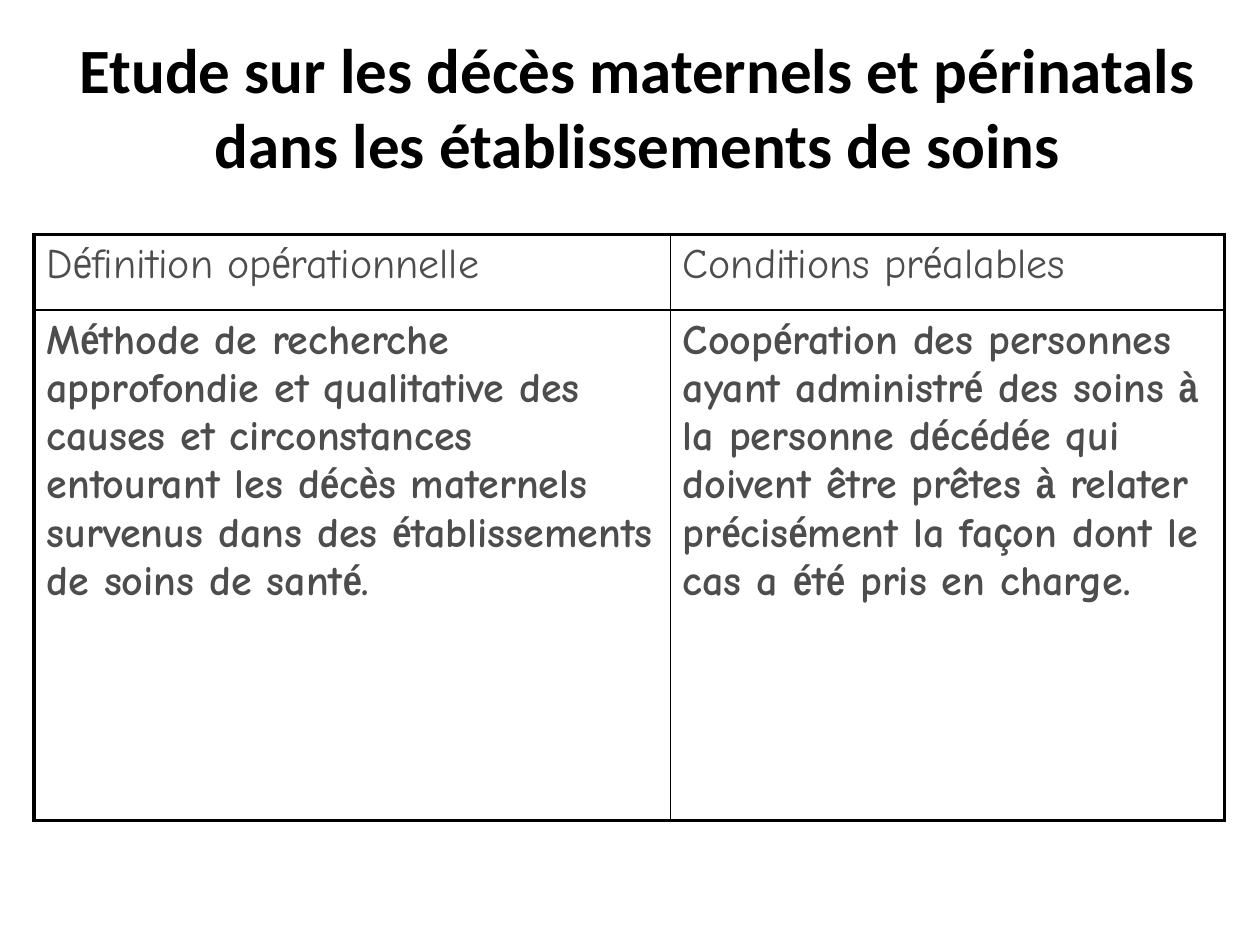
from itertools import groupby

from lxml.etree import SubElement
from pptx import Presentation
from pptx.dml.color import RGBColor
from pptx.enum.text import MSO_ANCHOR as Anchor, PP_ALIGN as Align
from pptx.oxml.ns import qn
from pptx.util import Inches, Pt

TITLE = "Etude sur les décès maternels et périnatals dans les établissements de soins"
ROWS = [
    ("Définition opérationnelle", "Conditions préalables"),
    (
        "Méthode de recherche approfondie et qualitative des causes et circonstances "
        "entourant les décès maternels survenus dans des établissements de soins de santé.",
        "Coopération des personnes ayant administré des soins à la personne décédée qui "
        "doivent être prêtes à relater précisément la façon dont le cas a été pris en charge.",
    ),
]
COLUMN_WIDTHS = [5.05, 4.4]
ROW_HEIGHTS = [0.6, 4.05]
COLORS = {"title": "000000", "text": "4D4D4D", "border": "000000"}
TITLE_FONT, BODY_FONT, ACCENT_FONT = "Calibri", "Comic Neue", "Arial Narrow"
ACCENTS = "éèàç"
OUTER, INNER = 2.25, 1


def write(para, text, font, size, color, bold=False, accent_font=None):
    for accented, letters in groupby(text, lambda letter: letter in ACCENTS):
        span = para.add_run()
        span.text = "".join(letters)
        span.font.name = accent_font if accented and accent_font else font
        span.font.size = Pt(size)
        span.font.bold = bold
        span.font.color.rgb = RGBColor.from_string(color)


def set_borders(cell, widths):
    properties = cell._tc.get_or_add_tcPr()
    for side in "LRTB":
        line = SubElement(properties, qn(f"a:ln{side}"), w=str(Pt(widths[side])))
        fill = SubElement(line, qn("a:solidFill"))
        SubElement(fill, qn("a:srgbClr"), val=COLORS["border"])


def add_title(page):
    box = page.shapes.add_textbox(Inches(0.12), Inches(0.29), Inches(9.88), Inches(1.1))
    frame = box.text_frame
    frame.word_wrap = True
    frame.vertical_anchor = Anchor.MIDDLE
    para = frame.paragraphs[0]
    para.alignment = Align.CENTER
    write(para, TITLE, TITLE_FONT, 36, COLORS["title"], bold=True)


def add_study_table(page):
    last_row, last_column = len(ROWS) - 1, len(COLUMN_WIDTHS) - 1
    table = page.shapes.add_table(
        len(ROWS), len(COLUMN_WIDTHS), Inches(0.27), Inches(1.86),
        Inches(sum(COLUMN_WIDTHS)), Inches(sum(ROW_HEIGHTS)),
    ).table
    table.first_row = table.horz_banding = False
    for column, width in zip(table.columns, COLUMN_WIDTHS):
        column.width = Inches(width)
    for row, height in zip(table.rows, ROW_HEIGHTS):
        row.height = Inches(height)
    for r, texts in enumerate(ROWS):
        for c, text in enumerate(texts):
            cell = table.cell(r, c)
            set_borders(cell, {
                "L": OUTER if c == 0 else INNER,
                "R": OUTER if c == last_column else INNER,
                "T": OUTER if r == 0 else INNER,
                "B": OUTER if r == last_row else INNER,
            })
            cell.fill.background()
            para = cell.text_frame.paragraphs[0]
            para.space_before, para.space_after = Pt(2.4), Pt(4.8)
            write(para, text, BODY_FONT, 24, COLORS["text"], bold=r > 0,
                  accent_font=ACCENT_FONT)


def main():
    deck = Presentation()
    deck.slide_width, deck.slide_height = Inches(10), Inches(7.5)
    page = deck.slides.add_slide(deck.slide_layouts[6])
    add_title(page)
    add_study_table(page)
    deck.save("out.pptx")


if __name__ == "__main__":
    main()
